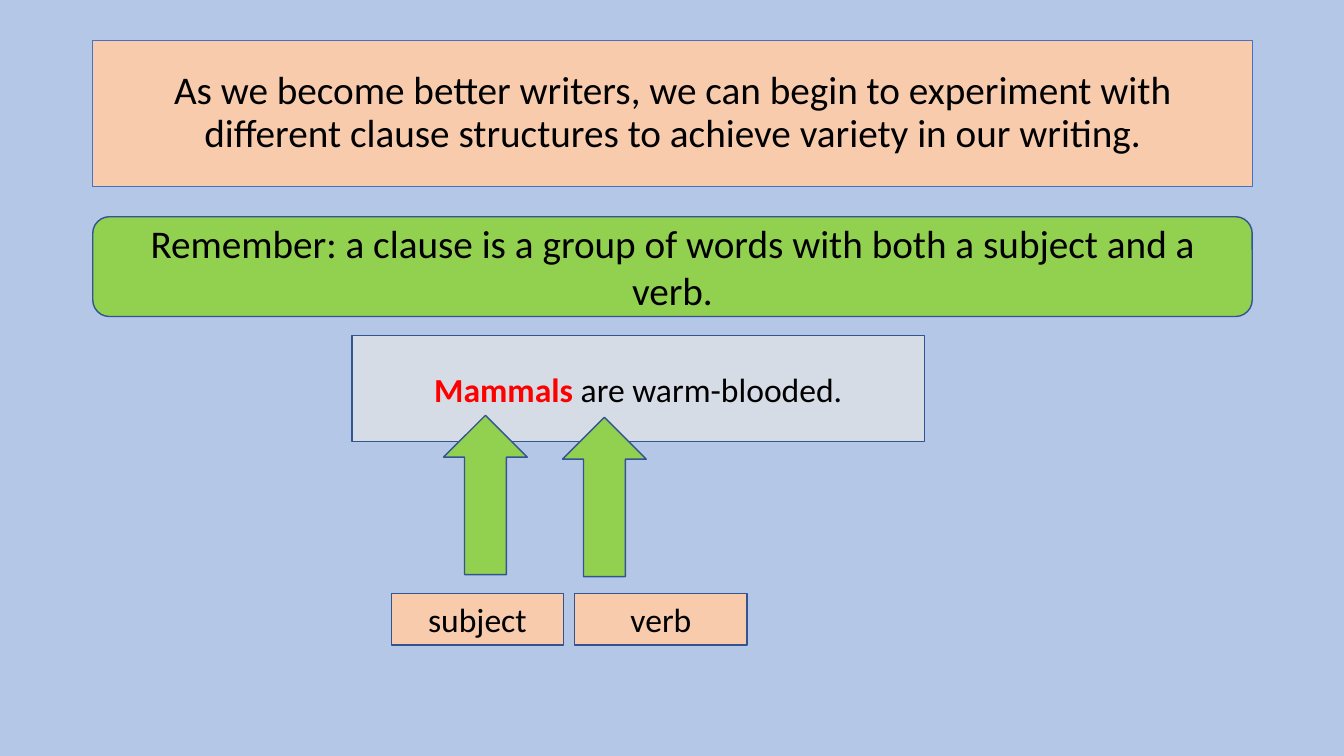
from pptx import Presentation
from pptx.dml.color import RGBColor
from pptx.enum.shapes import MSO_SHAPE
from pptx.enum.text import MSO_ANCHOR, PP_ALIGN
from pptx.util import Inches, Pt

COLORS = {
    "background": "B4C7E7", "peach": "F8CBAD", "green": "92D050", "grey": "D6DCE5",
    "title_line": "4472C4", "line": "325491", "text": "000000", "subject": "FF0000",
}
FONT = "Calibri"

TITLE = ("As we become better writers, we can begin to experiment with "
         "different clause structures to achieve variety in our writing.")
TITLE_AREA = (0.92, 0.4, 11.5, 1.45)

# Each run: text, colour, bold
REMINDER = [("Remember: a clause is a group of words with both a subject and a verb.",
             "text", False)]
SENTENCE = [("Mammals ", "subject", True), ("are warm-blooded.", "text", False)]

# Each label: word, box left, arrow left, arrow top
LABELS = [("subject", 3.88, 4.4, 4.12), ("verb", 5.7, 5.58, 4.14)]
LABEL_TOP, LABEL_WIDTH, LABEL_HEIGHT = 5.89, 1.71, 0.51
ARROW_WIDTH, ARROW_HEIGHT = 0.83, 1.58


def color(name):
    return RGBColor.from_string(COLORS[name])


def style(shape, fill, line="line", width=1):
    shape.fill.solid()
    shape.fill.fore_color.rgb = color(fill)
    shape.line.color.rgb = color(line)
    shape.line.width = Pt(width)


def write(shape, runs, size):
    frame = shape.text_frame
    frame.word_wrap = True
    frame.vertical_anchor = MSO_ANCHOR.MIDDLE
    para = frame.paragraphs[0]
    para.alignment = PP_ALIGN.CENTER
    for text, ink, bold in runs:
        span = para.add_run()
        span.text = text
        span.font.name = FONT
        span.font.size = Pt(size)
        span.font.bold = bold
        span.font.color.rgb = color(ink)
    return para


def add_box(page, kind, area, fill, runs=(), size=24):
    box = page.shapes.add_shape(kind, *map(Inches, area))
    box.shadow.inherit = False
    style(box, fill)
    if runs:
        write(box, runs, size)


def main():
    deck = Presentation()
    deck.slide_width, deck.slide_height = Inches(13.33), Inches(7.5)
    page = deck.slides.add_slide(deck.slide_layouts[5])
    page.background.fill.solid()
    page.background.fill.fore_color.rgb = color("background")

    # Title
    title = page.shapes.title
    title.left, title.top, title.width, title.height = map(Inches, TITLE_AREA)
    style(title, "peach", "title_line", 0.75)
    write(title, [(TITLE, "text", False)], 28).line_spacing = 0.9

    # Reminder and example sentence
    add_box(page, MSO_SHAPE.ROUNDED_RECTANGLE, (0.92, 2.15, 11.5, 0.99),
            "green", REMINDER, 28)
    add_box(page, MSO_SHAPE.RECTANGLE, (3.49, 3.33, 5.68, 1.05), "grey", SENTENCE)

    # Arrows with their labels
    for word, box_left, arrow_left, arrow_top in LABELS:
        add_box(page, MSO_SHAPE.UP_ARROW,
                (arrow_left, arrow_top, ARROW_WIDTH, ARROW_HEIGHT), "green")
        add_box(page, MSO_SHAPE.RECTANGLE,
                (box_left, LABEL_TOP, LABEL_WIDTH, LABEL_HEIGHT),
                "peach", [(word, "text", False)])

    deck.save("out.pptx")


if __name__ == "__main__":
    main()
